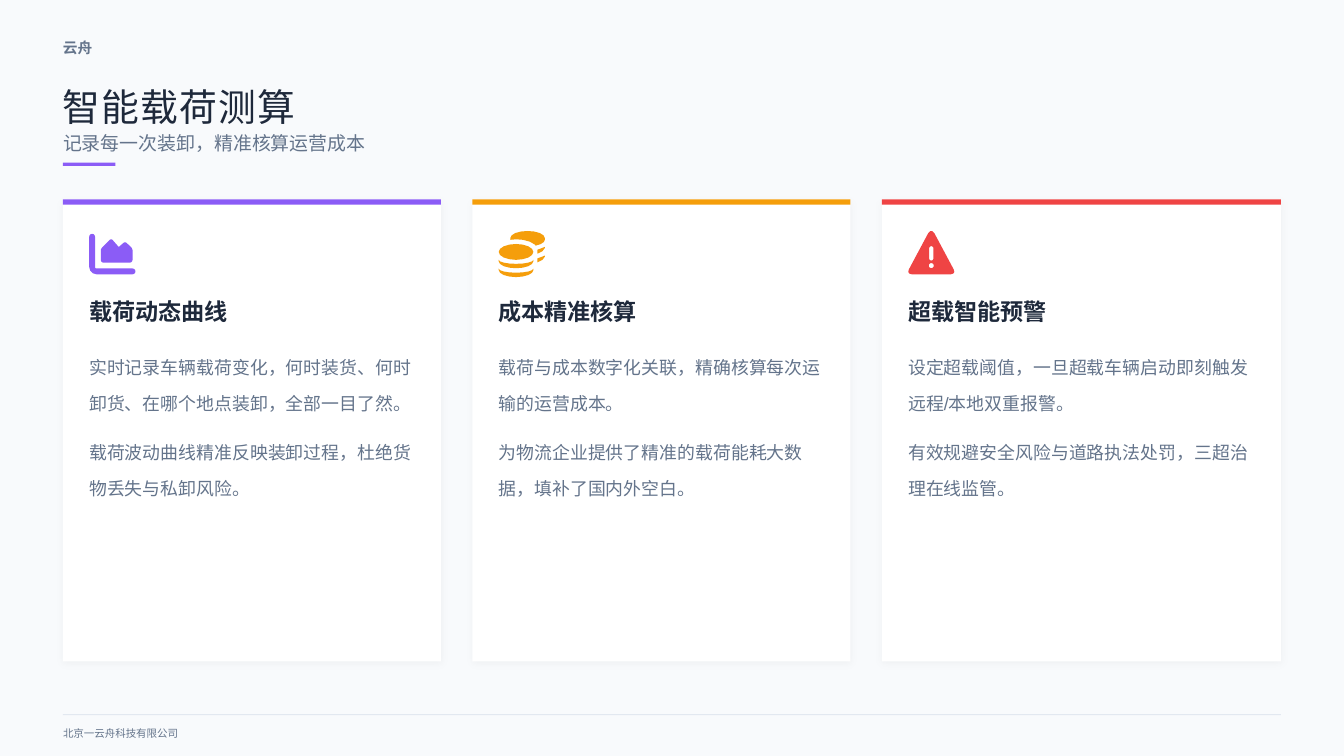
from dataclasses import dataclass
from math import ceil, cos, dist, radians, sin

from lxml.etree import SubElement
from pptx import Presentation
from pptx.dml.color import RGBColor
from pptx.enum.shapes import MSO_SHAPE
from pptx.enum.text import MSO_ANCHOR
from pptx.oxml.ns import qn
from pptx.util import Pt


@dataclass(frozen=True)
class Theme:
    font: str = "Arial"
    background: str = "F8FAFC"
    surface: str = "FFFFFF"
    ink: str = "1E293B"
    muted: str = "64748B"
    rule: str = "E2E8F0"
    violet: str = "8B5CF6"
    amber: str = "F59E0B"
    red: str = "EF4444"
    title: int = 36
    heading: int = 22
    subtitle: int = 18
    body: int = 17
    brand: int = 14
    footer: int = 10


THEME = Theme()
MARGIN, CONTENT_WIDTH = 60, 1160
CARD_TOP, CARD_HEIGHT, CARD_GAP, CARD_PAD = 190, 440, 30, 25
ICON_SIZE, ICON_GRID = 44, 512


# Outlines on the icon grid
def arc(cx, cy, rx, ry, start, end):
    steps = ceil(abs(end - start) / 22.5)
    angles = [radians(start + (end - start) * i / steps) for i in range(steps + 1)]
    return [(cx + rx * cos(a), cy + ry * sin(a)) for a in angles]


def toward(a, b, share):
    return tuple(p + (q - p) * share for p, q in zip(a, b))


def rounded(corners):
    """Polygon from (x, y, trim) corners, each corner cut by a smooth curve."""
    outline = []
    for i, (x, y, trim) in enumerate(corners):
        corner = (x, y)
        if not trim:
            outline.append(corner)
            continue
        before, after = corners[i - 1][:2], corners[(i + 1) % len(corners)][:2]
        start = toward(corner, before, trim / dist(corner, before))
        end = toward(corner, after, trim / dist(corner, after))
        c1, c2 = toward(start, corner, 0.55), toward(end, corner, 0.55)
        for t in (0, 1 / 3, 2 / 3, 1):
            ab, bc, cd = toward(start, c1, t), toward(c1, c2, t), toward(c2, end, t)
            outline.append(toward(toward(ab, bc, t), toward(bc, cd, t), t))
    return outline


def chart_icon():
    axes = [(0, 32, 32), (64, 32, 32), (64, 416, 16),
            (512, 416, 32), (512, 480, 32), (0, 480, 80)]
    area = [(128, 352, 32), (128, 200, 16), (243, 82, 24), (327, 178, 0),
            (398, 116, 24), (480, 196, 20), (480, 352, 32)]
    return [rounded(axes), rounded(area)]


def coins_icon():
    back_coin = (arc(320, 80, 192, 80, 180, 360) + arc(320, 96, 192, 75, 0, 62)
                 + [(400, 150), (344, 118), (270, 98), (193, 92), (128, 98)])
    back_edges = [[(428, y + 76), (428, y + 32), (470, y + 17),
                   (512, y), (512, y + 12), (485, y + 48)] for y in (176, 272)]
    front_edges = [arc(192, y, 192, 44, 180, 0) + arc(192, y + 16, 192, 77, 0, 180)
                   for y in (320, 418)]
    return [back_coin, *back_edges, arc(192, 232, 192, 88, 0, 360), *front_edges]


def warning_icon():
    triangle = [(256, -38, 74), (533, 480, 60), (-21, 480, 60)]
    bar = [(232, 168, 24), (280, 168, 24), (280, 328, 24), (232, 328, 24)]
    return [rounded(triangle), rounded(bar), arc(256, 384, 28, 28, 0, 360)]


# Kinds of element
def paint(shape, color):
    shape.shadow.inherit = False
    shape.fill.solid()
    shape.fill.fore_color.rgb = RGBColor.from_string(color)
    shape.line.fill.background()


def add_block(slide, left, top, width, height, color):
    block = slide.shapes.add_shape(
        MSO_SHAPE.RECTANGLE, Pt(left), Pt(top), Pt(width), Pt(height))
    paint(block, color)
    return block


def add_soft_shadow(block):
    effects = block._element.spPr.find(qn("a:effectLst"))
    shadow = SubElement(effects, qn("a:outerShdw"), blurRad=str(Pt(8)),
                        dist=str(Pt(2)), dir="5400000", algn="ctr", rotWithShape="0")
    color = SubElement(shadow, qn("a:srgbClr"), val="000000")
    SubElement(color, qn("a:alpha"), val="3000")


def add_icon(slide, left, top, outlines, color):
    first, *others = outlines
    builder = slide.shapes.build_freeform(*first[0], scale=Pt(ICON_SIZE) / ICON_GRID)
    builder.add_line_segments(first[1:], close=True)
    for outline in others:
        builder.move_to(*outline[0])
        builder.add_line_segments(outline[1:], close=True)
    paint(builder.convert_to_shape(Pt(left), Pt(top)), color)


def add_text(slide, left, top, width, height, texts, size, color, bold=False,
             spacing=None, gap=0, wrap=False, anchor=MSO_ANCHOR.MIDDLE):
    frame = slide.shapes.add_textbox(Pt(left), Pt(top), Pt(width), Pt(height)).text_frame
    frame.margin_left = frame.margin_right = frame.margin_top = frame.margin_bottom = 0
    frame.word_wrap = wrap
    frame.vertical_anchor = anchor
    for i, text in enumerate(texts):
        paragraph = frame.add_paragraph() if i else frame.paragraphs[0]
        paragraph.text = text
        paragraph.line_spacing = spacing
        # Keep closing punctuation inside the text width
        paragraph._p.get_or_add_pPr().set("hangingPunct", "0")
        if i:
            paragraph.space_before = Pt(gap)
        font = paragraph.font
        font.name, font.size, font.bold = THEME.font, Pt(size), bold
        font.color.rgb = RGBColor.from_string(color)
    return frame


def add_card(slide, left, width, color, icon, heading, texts):
    add_soft_shadow(add_block(slide, left, CARD_TOP, width, CARD_HEIGHT, THEME.surface))
    add_block(slide, left, CARD_TOP, width, 5, color)
    inner_left, inner_width = left + CARD_PAD, width - 2 * CARD_PAD
    add_icon(slide, inner_left, CARD_TOP + 30, icon, color)
    add_text(slide, inner_left, CARD_TOP + 90, inner_width, 32, [heading],
             THEME.heading, THEME.ink, bold=True)
    add_text(slide, inner_left, CARD_TOP + 135, inner_width, 280, texts,
             THEME.body, THEME.muted, spacing=1.7, gap=12, wrap=True,
             anchor=MSO_ANCHOR.TOP)


def main():
    deck = Presentation()
    deck.slide_width, deck.slide_height = Pt(1280), Pt(720)
    slide = deck.slides.add_slide(deck.slide_layouts[6])
    slide.background.fill.solid()
    slide.background.fill.fore_color.rgb = RGBColor.from_string(THEME.background)

    # Header
    add_text(slide, MARGIN, 30, 100, 22, ["云舟"], THEME.brand, THEME.muted,
             bold=True, spacing=1.5)
    title = add_text(slide, MARGIN, 70, 800, 50, ["智能载荷测算"],
                     THEME.title, THEME.ink, spacing=1.3)
    title.paragraphs[0].runs[0]._r.get_or_add_rPr().set("spc", "100")
    add_text(slide, MARGIN, 122, 500, 28, ["记录每一次装卸，精准核算运营成本"],
             THEME.subtitle, THEME.muted)
    add_block(slide, MARGIN, 155, 50, 3, THEME.violet)

    # Feature cards
    features = [
        (360, THEME.violet, chart_icon(), "载荷动态曲线",
         ["实时记录车辆载荷变化，何时装货、何时卸货、在哪个地点装卸，全部一目了然。",
          "载荷波动曲线精准反映装卸过程，杜绝货物丢失与私卸风险。"]),
        (360, THEME.amber, coins_icon(), "成本精准核算",
         ["载荷与成本数字化关联，精确核算每次运输的运营成本。",
          "为物流企业提供了精准的载荷能耗大数据，填补了国内外空白。"]),
        (380, THEME.red, warning_icon(), "超载智能预警",
         ["设定超载阈值，一旦超载车辆启动即刻触发远程/本地双重报警。",
          "有效规避安全风险与道路执法处罚，三超治理在线监管。"]),
    ]
    left = MARGIN
    for width, *content in features:
        add_card(slide, left, width, *content)
        left += width + CARD_GAP

    # Footer
    add_block(slide, MARGIN, 680, CONTENT_WIDTH, 1, THEME.rule)
    add_text(slide, MARGIN, 688, 400, 20, ["北京一云舟科技有限公司"],
             THEME.footer, THEME.muted)

    deck.save("out.pptx")


if __name__ == "__main__":
    main()
